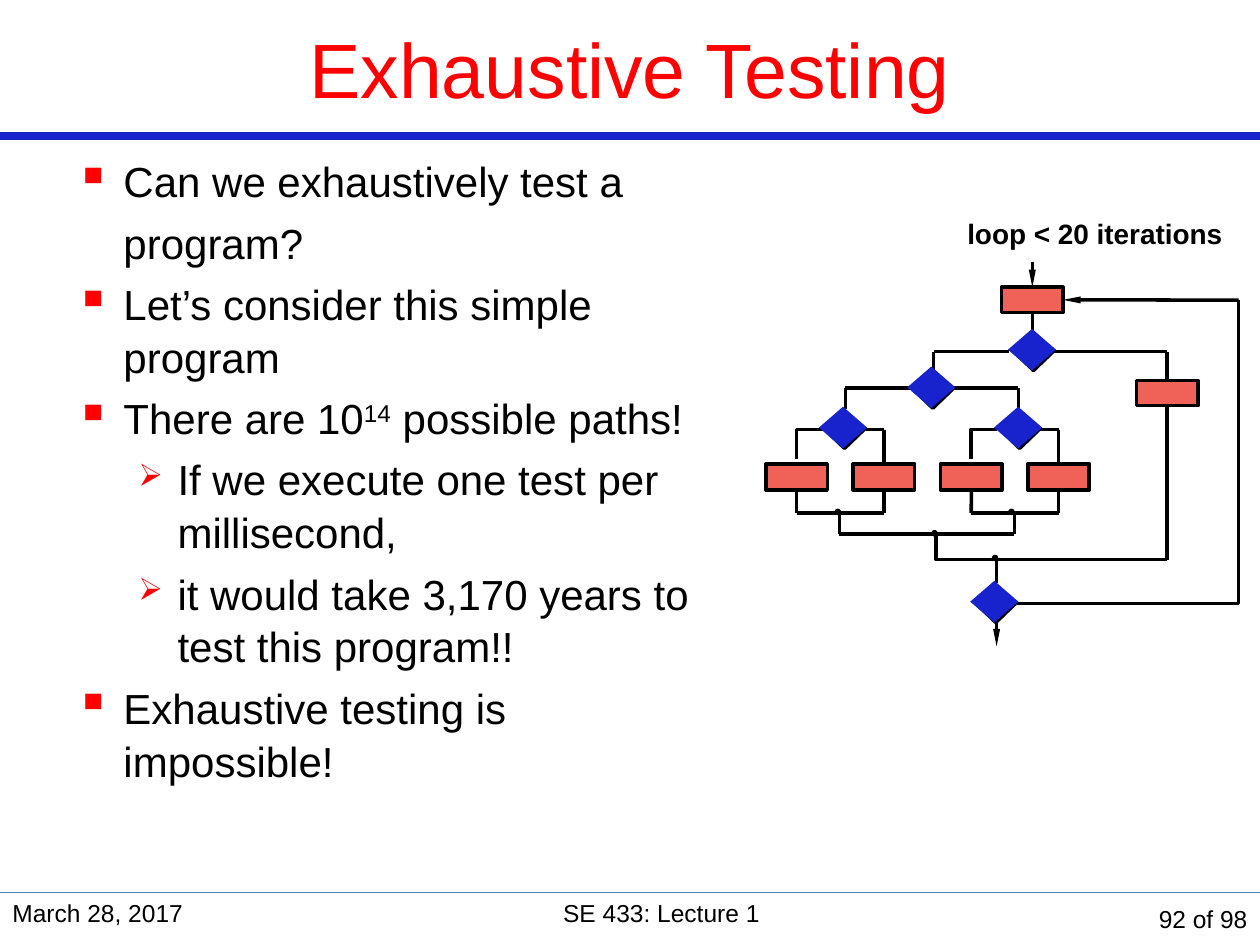
import pptx
import pptx.util
import pptx.dml.color
import pptx.enum.shapes
import pptx.enum.text
import lxml.etree
from pptx.util import Cm

COLORS = {"red": "FF0000", "blue": "1822CD", "rule": "4F81BD", "block": "F06157", "black": "000000"}
RGB = {name: pptx.dml.color.RGBColor.from_string(value) for name, value in COLORS.items()}
ALIGN = pptx.enum.text.PP_ALIGN
ANCHOR = pptx.enum.text.MSO_ANCHOR
SHAPE = pptx.enum.shapes.MSO_SHAPE
STRAIGHT = pptx.enum.shapes.MSO_CONNECTOR.STRAIGHT
A = "{http://schemas.openxmlformats.org/drawingml/2006/main}"

deck = pptx.Presentation()
deck.slide_width, deck.slide_height = Cm(25.4), Cm(19.05)
slide = deck.slides.add_slide(deck.slide_layouts[6])
shapes = slide.shapes


def add_line(x1, y1, x2, y2, color="black", width=2, start=None, end=None, arrow=False):
    line = shapes.add_connector(STRAIGHT, Cm(x1), Cm(y1), Cm(x2), Cm(y2))
    if start:
        line.begin_connect(*start)
    if end:
        line.end_connect(*end)
    line.line.color.rgb = RGB[color]
    line.line.width = pptx.util.Pt(width)
    if arrow:
        lxml.etree.SubElement(line.line._get_or_add_ln(), A + "tailEnd", type="triangle", w="sm", len="lg")
    lxml.etree.SubElement(line._element.spPr, A + "effectLst")


def add_preset(kind, left, top, width, height, fill=None, outlined=True):
    preset = shapes.add_shape(kind, Cm(left), Cm(top), Cm(width), Cm(height))
    preset.shadow.inherit = False
    if fill:
        preset.fill.solid()
        preset.fill.fore_color.rgb = RGB[fill]
    else:
        preset.fill.background()
    if outlined:
        preset.line.color.rgb = RGB["black"]
        preset.line.width = pptx.util.Pt(2)
    else:
        preset.line.fill.background()
    return preset


add_line(0, 2.74, 25.4, 2.74, "blue", 4.5)
add_line(0, 17.99, 25.4, 17.99, "rule", 0.75)

captions = [
    ("Exhaustive Testing", 0, 0, 25.4, 2.74, 44, "red", ALIGN.CENTER, ANCHOR.MIDDLE, False),
    ("loop < 20 iterations", 19.25, 4.24, 5.66, 0.91, 16, "black", ALIGN.LEFT, ANCHOR.TOP, True),
    ("March 28, 2017", 0, 17.98, 5.5, 1.07, 14, "black", ALIGN.LEFT, ANCHOR.TOP, False),
    ("SE 433: Lecture 1", 5.5, 17.98, 15.67, 1.07, 14, "black", ALIGN.CENTER, ANCHOR.TOP, False),
    ("92 of 98", 21.17, 17.98, 4.23, 1.07, 14, "black", ALIGN.RIGHT, ANCHOR.MIDDLE, False),
]
for wording, left, top, width, height, size, color, align, anchor, bold in captions:
    caption = shapes.add_textbox(Cm(left), Cm(top), Cm(width), Cm(height)).text_frame
    caption.text = wording
    caption.word_wrap = not bold
    caption.vertical_anchor = anchor
    caption.paragraphs[0].alignment = align
    font = caption.paragraphs[0].runs[0].font
    font.name, font.size, font.bold = "Arial", pptx.util.Pt(size), bold
    font.color.rgb = RGB[color]

points = [
    (0, "▪", ["Can we exhaustively test a"]),
    (0, None, ["program?"]),
    (0, "▪", ["Let’s consider this simple program"]),
    (0, "▪", ["There are 10", "14", " possible paths!"]),
    (1, "➢", ["If we execute one test per millisecond,"]),
    (1, "➢", ["it would take 3,170 years to test this program!!"]),
    (0, "▪", ["Exhaustive testing is impossible!"]),
]
margins = [(0.97, -0.97, 114), (2.06, -0.79, 74)]
body = shapes.add_textbox(Cm(1.27), Cm(2.97), Cm(13.13), Cm(15.04)).text_frame
body.word_wrap = True
for index, (level, bullet, parts) in enumerate(points):
    point = body.paragraphs[0] if index == 0 else body.add_paragraph()
    point.level = level
    point.line_spacing = 1.05
    point.space_before = pptx.util.Pt(4.8)
    for part in parts:
        run = point.add_run()
        run.text = part
        run.font.name, run.font.size = "Arial", pptx.util.Pt(24)
        run.font.color.rgb = RGB["black"]
        if part == "14":
            run.font._element.set("baseline", "30000")
    margin, indent, bullet_size = margins[level]
    properties = point._p.get_or_add_pPr()
    properties.set("marL", str(Cm(margin)))
    properties.set("indent", str(Cm(indent) if bullet else 0))
    if bullet:
        bullet_color = lxml.etree.SubElement(properties, A + "buClr")
        lxml.etree.SubElement(bullet_color, A + "srgbClr", val=COLORS["red"])
        lxml.etree.SubElement(properties, A + "buSzPct", val=str(bullet_size * 1000))
        lxml.etree.SubElement(properties, A + "buChar", char=bullet)

entry = add_preset(SHAPE.RECTANGLE, 20.19, 5.79, 1.24, 0.51, "block")
bypass = add_preset(SHAPE.RECTANGLE, 22.91, 7.67, 1.24, 0.51, "block")
leaves = [add_preset(SHAPE.RECTANGLE, 15.44 + 1.76 * i, 9.35, 1.24, 0.53, "block") for i in range(4)]
leaf_x = [16.06 + 1.76 * i for i in range(4)]

add_line(20.81, 5.28, 20.81, 5.79, end=(entry, 0), arrow=True)
add_line(24.97, 6.05, 21.43, 6.05, end=(entry, 3), arrow=True)
add_line(20.81, 6.3, 20.81, 6.68, start=(entry, 2))
add_line(23.53, 7.09, 23.53, 7.67, end=(bypass, 0))
add_line(23.53, 8.18, 23.53, 11.28, start=(bypass, 2))
for leaf, x in zip(leaves, leaf_x):
    add_line(x, 9.88, x, 10.34, start=(leaf, 2))
for leaf, x in zip(leaves[1::2], leaf_x[1::2]):
    add_line(x, 8.66, x, 9.35, end=(leaf, 0))
    add_line(x - 0.4, 8.66, x, 8.66)
    add_line(x - 1.76, 10.34, x, 10.34)

branches = [
    (20.35, 7.09, 18.82, 7.09), (18.82, 7.09, 18.82, 7.47), (21.23, 7.09, 23.53, 7.09),
    (18.42, 7.82, 17.04, 7.82), (17.04, 7.82, 17.04, 8.25),
    (19.2, 7.82, 20.53, 7.82), (20.53, 7.82, 20.53, 8.25),
    (16.92, 10.34, 16.92, 10.77), (20.45, 10.34, 20.45, 10.77), (16.92, 10.77, 20.45, 10.77),
    (20.09, 11.28, 23.53, 11.28), (20.09, 11.28, 20.09, 11.76),
]
for branch in branches:
    add_line(*branch)
add_line(20.09, 12.52, 20.09, 13.03, arrow=True)

elbows = [
    [(16.59, 8.66), (16.06, 8.66), (16.06, 9.25)],
    [(20.09, 8.66), (19.58, 8.66), (19.58, 9.25)],
    [(18.87, 10.77), (18.87, 11.28), (20.09, 11.28)],
    [(20.5, 12.17), (24.97, 12.17), (24.97, 6.05)],
]
for elbow in elbows:
    corners = [(Cm(x), Cm(y)) for x, y in elbow]
    builder = shapes.build_freeform(*corners[0])
    builder.add_line_segments(corners[1:], close=False)
    bend = builder.convert_to_shape()
    bend.shadow.inherit = False
    bend.fill.background()
    bend.line.color.rgb = RGB["black"]
    bend.line.width = pptx.util.Pt(2)

for x, y in [(16.89, 10.32), (20.39, 10.32), (18.84, 10.75), (20.06, 11.25)]:
    add_preset(SHAPE.OVAL, x - 0.03, y - 0.03, 0.06, 0.06, "black")

for left, top in [(20.32, 6.63), (18.29, 7.39), (16.51, 8.2), (20.04, 8.2), (19.56, 11.71)]:
    add_preset(SHAPE.DIAMOND, left + 0.12, top + 0.08, 0.79, 0.76)
    add_preset(SHAPE.DIAMOND, left, top, 0.97, 0.84, "blue", outlined=False)

deck.save("out.pptx")
